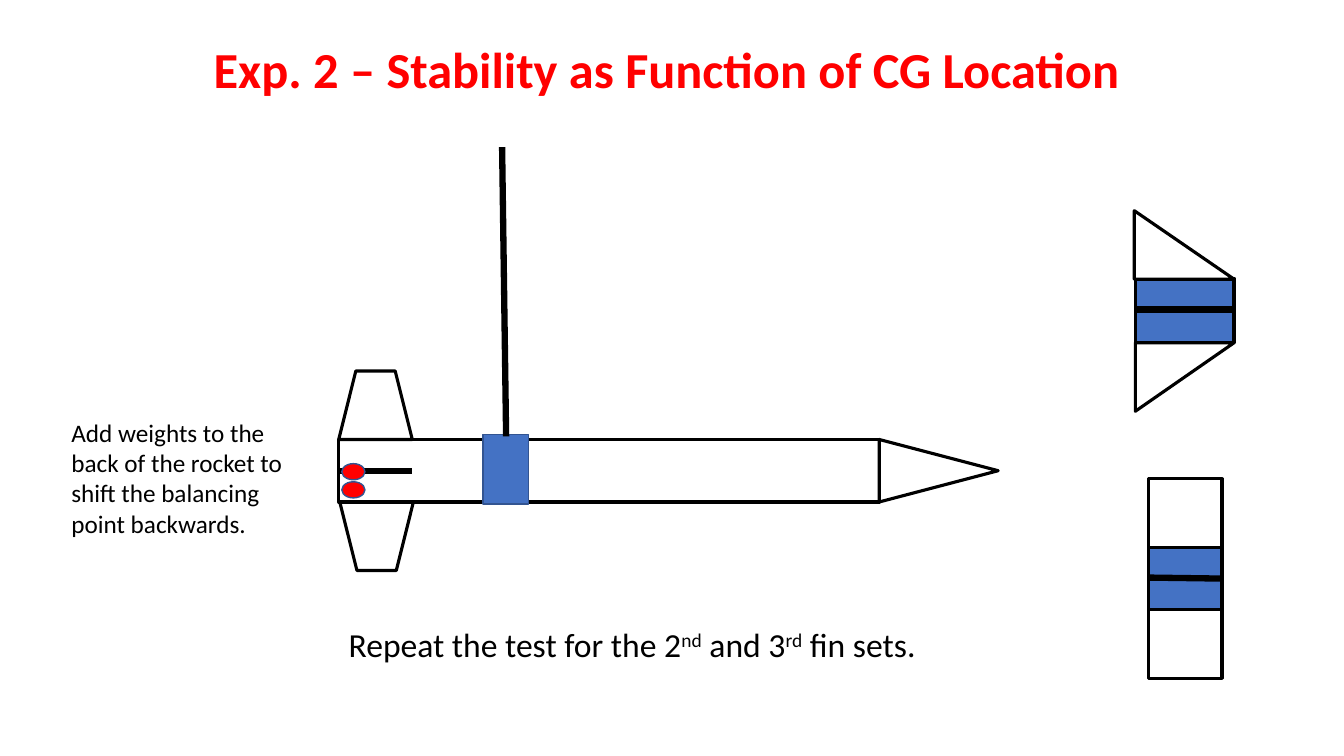
from dataclasses import dataclass
from typing import Optional, Sequence, Union

from lxml.etree import SubElement
from pptx import Presentation
from pptx.dml.color import RGBColor
from pptx.enum.shapes import MSO_CONNECTOR, MSO_SHAPE as Shape
from pptx.enum.text import MSO_ANCHOR, PP_ALIGN as Align
from pptx.oxml.ns import qn
from pptx.util import Pt

EMU_PER_PX = 9144  # 100 px to the inch
FONT = "Calibri"
BLACK = RGBColor(0x00, 0x00, 0x00)
WHITE = RGBColor(0xFF, 0xFF, 0xFF)
RED = RGBColor(0xFF, 0x00, 0x00)
BLUE = RGBColor(0x44, 0x72, 0xC4)
DARK_BLUE = RGBColor(0x32, 0x54, 0x91)


@dataclass(frozen=True)
class Part:
    kind: Shape
    x: int
    y: int
    width: int
    height: int
    fill: Optional[RGBColor] = None
    line: RGBColor = BLACK
    weight: float = 2.25
    rotation: int = 0


@dataclass(frozen=True)
class Bar:
    x1: int
    y1: int
    x2: int
    y2: int
    weight: float = 4.5


Piece = Union[Part, Bar]

ROCKET = (
    Part(Shape.RECTANGLE, 336, 436, 536, 62),
    Part(Shape.ISOSCELES_TRIANGLE, 900, 408, 62, 118, rotation=90),
    Part(Shape.TRAPEZOID, 336, 368, 73, 68),
    Part(Shape.TRAPEZOID, 337, 498, 73, 68, rotation=180),
    Bar(336, 467, 409, 467),
)
SUSPENSION = (
    Part(Shape.RECTANGLE, 479, 431, 45, 69, BLUE, DARK_BLUE, 1),
    Bar(502, 433, 498, 146),
)
WEIGHTS = tuple(
    Part(Shape.OVAL, 339, y, 23, 16, RED, DARK_BLUE, 1) for y in (478, 460)
)
SQUARE_FINS = (
    Part(Shape.RECTANGLE, 1139, 542, 73, 64, BLUE),
    Bar(1139, 573, 1211, 574),
    *(Part(Shape.RECTANGLE, 1139, y, 73, 68, WHITE) for y in (475, 605)),
)
SWEPT_FINS = (
    Part(Shape.RECTANGLE, 1126, 276, 98, 64, BLUE),
    Bar(1126, 307, 1225, 307),
    Part(Shape.RIGHT_TRIANGLE, 1125, 209, 99, 68, WHITE),
    Part(Shape.RIGHT_TRIANGLE, 1141, 325, 68, 98, WHITE, rotation=90),
)


def px(length: int) -> int:
    return length * EMU_PER_PX


def draw_part(shapes, part: Part) -> None:
    shape = shapes.add_shape(
        part.kind, px(part.x), px(part.y), px(part.width), px(part.height)
    )
    shape.shadow.inherit = False
    shape.rotation = part.rotation
    if part.fill is None:
        shape.fill.background()
    else:
        shape.fill.solid()
        shape.fill.fore_color.rgb = part.fill
    shape.line.color.rgb = part.line
    shape.line.width = Pt(part.weight)


def draw_bar(shapes, bar: Bar) -> None:
    connector = shapes.add_connector(
        MSO_CONNECTOR.STRAIGHT, px(bar.x1), px(bar.y1), px(bar.x2), px(bar.y2)
    )
    connector.line.color.rgb = BLACK
    connector.line.width = Pt(bar.weight)
    SubElement(connector._element.spPr, qn("a:effectLst"))


def draw_pieces(shapes, pieces: Sequence[Piece]) -> None:
    for piece in pieces:
        if isinstance(piece, Bar):
            draw_bar(shapes, piece)
        else:
            draw_part(shapes, piece)


def add_text(
    shapes,
    segments: Sequence[str],
    x: int,
    y: int,
    width: int,
    height: int,
    *,
    size: int,
    color: RGBColor = BLACK,
    bold: bool = False,
    align: Align = Align.LEFT,
    line_spacing: float = 1.0,
) -> None:
    """Write one paragraph; every second segment is superscript."""
    frame = shapes.add_textbox(px(x), px(y), px(width), px(height)).text_frame
    frame.word_wrap = True
    frame.vertical_anchor = MSO_ANCHOR.TOP
    paragraph = frame.paragraphs[0]
    paragraph.alignment = align
    paragraph.line_spacing = line_spacing
    for index, segment in enumerate(segments):
        run = paragraph.add_run()
        run.text = segment
        run.font.name = FONT
        run.font.size = Pt(size)
        run.font.bold = bold
        run.font.color.rgb = color
        if index % 2:
            run._r.get_or_add_rPr().set("baseline", "30000")


def main() -> None:
    presentation = Presentation()
    presentation.slide_width = px(1333)
    presentation.slide_height = px(750)
    slide = presentation.slides.add_slide(presentation.slide_layouts[6])
    shapes = slide.shapes

    draw_pieces(shapes.add_group_shape().shapes, ROCKET)
    draw_pieces(shapes, SUSPENSION + WEIGHTS)
    add_text(
        shapes, ["Exp. 2 – Stability as Function of CG Location "], 92, 40, 1150, 83,
        size=36, color=RED, bold=True, align=Align.CENTER, line_spacing=0.9,
    )
    for fin_set in (SQUARE_FINS, SWEPT_FINS):
        draw_pieces(shapes.add_group_shape().shapes, fin_set)
    add_text(
        shapes,
        ["Add weights to the back of the rocket to shift the balancing point backwards."],
        61, 409, 236, 131, size=18,
    )
    add_text(
        shapes, ["Repeat the test for the 2", "nd", " and 3", "rd", " fin sets."],
        336, 614, 629, 50, size=24,
    )
    presentation.save("out.pptx")


if __name__ == "__main__":
    main()
